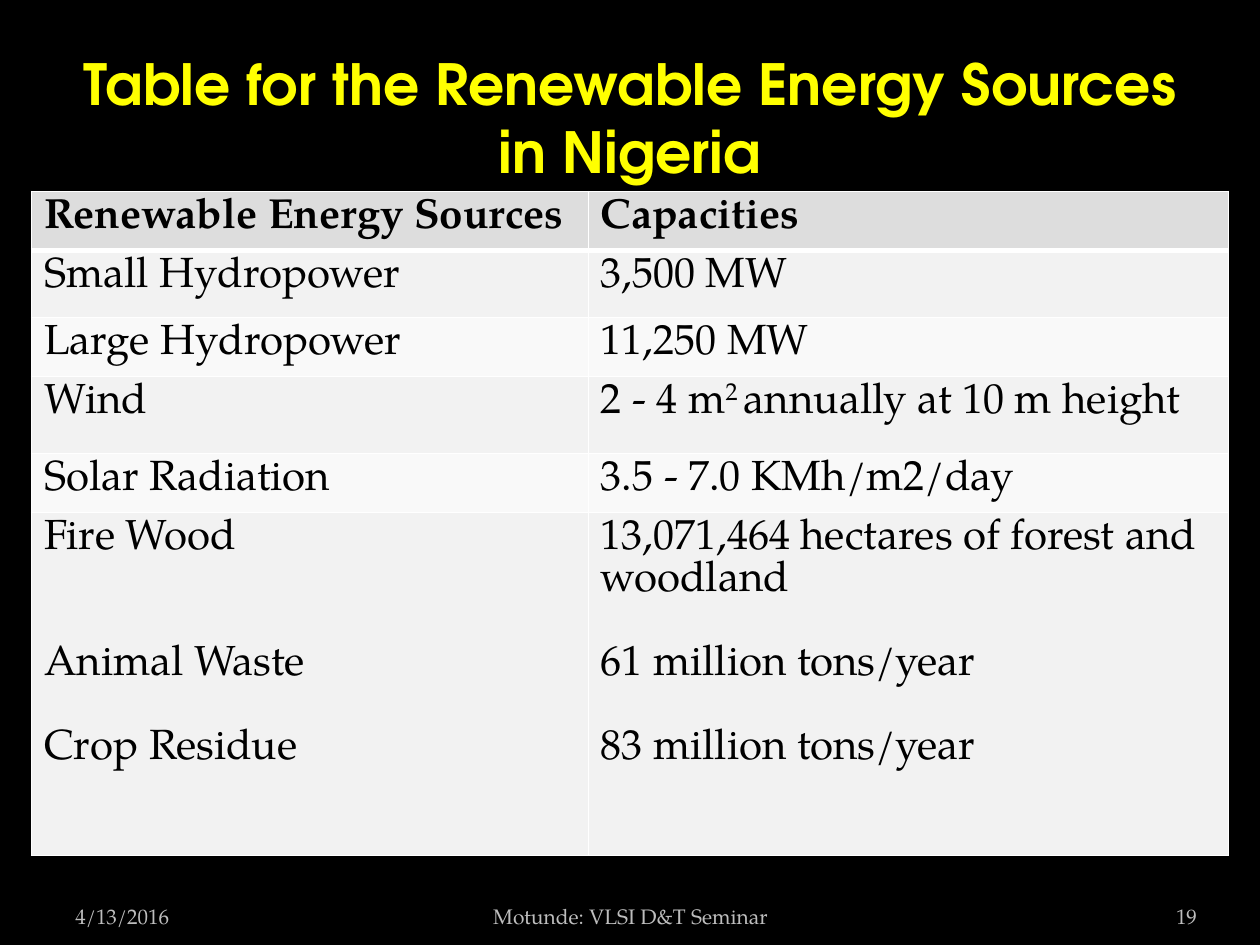
from dataclasses import dataclass

from lxml import etree
from pptx import Presentation
from pptx.dml.color import RGBColor
from pptx.enum.text import MSO_ANCHOR, PP_ALIGN
from pptx.oxml.ns import qn
from pptx.util import Inches, Pt

LEFT, CENTER, RIGHT = PP_ALIGN.LEFT, PP_ALIGN.CENTER, PP_ALIGN.RIGHT
TOP, MIDDLE, BOTTOM = MSO_ANCHOR.TOP, MSO_ANCHOR.MIDDLE, MSO_ANCHOR.BOTTOM
TITLE_ONLY = 5


@dataclass(frozen=True)
class Theme:
    back: str = "000000"
    title: str = "FFFF00"
    ink: str = "000000"
    foot: str = "BDBDBD"
    rule: str = "FFFFFF"
    head: str = "DDDDDD"
    bands: tuple = ("F2F2F2", "F9F9F9")
    title_font: str = "TeX Gyre Adventor"
    body_font: str = "TeX Gyre Pagella"
    title_size: float = 32.4
    body_size: float = 24
    foot_size: float = 12


class Deck:
    def __init__(self, theme):
        self.theme = theme
        self.prs = Presentation()
        self.prs.slide_width, self.prs.slide_height = Inches(10), Inches(7.5)
        self.slide = None

    def add_slide(self):
        self.slide = self.prs.slides.add_slide(self.prs.slide_layouts[TITLE_ONLY])
        fill = self.slide.background.fill
        fill.solid()
        fill.fore_color.rgb = RGBColor.from_string(self.theme.back)

    def style(self, para, font, size, color, bold=False):
        for run in para.runs:
            run.font.name, run.font.size, run.font.bold = font, Pt(size), bold
            run.font.color.rgb = RGBColor.from_string(color)

    def title(self, text, box):
        t = self.theme
        shape = self.slide.shapes.title
        shape.left, shape.top, shape.width, shape.height = map(Inches, box)
        frame = shape.text_frame
        frame.text = text
        frame.word_wrap, frame.vertical_anchor = True, MIDDLE
        para = frame.paragraphs[0]
        para.alignment = CENTER
        self.style(para, t.title_font, t.title_size, t.title, True)

    def footer(self, text, box, align, inset=0.1):
        t = self.theme
        frame = self.slide.shapes.add_textbox(*map(Inches, box)).text_frame
        frame.text = text
        frame.word_wrap, frame.vertical_anchor = True, BOTTOM
        frame.margin_left = frame.margin_right = Inches(inset)
        para = frame.paragraphs[0]
        para.alignment = align
        self.style(para, t.body_font, t.foot_size, t.foot)

    def border(self, cell, side, width):
        props = cell._tc.get_or_add_tcPr()
        line = etree.SubElement(props, qn(f"a:ln{side}"), w=str(Pt(width)))
        fill = etree.SubElement(line, qn("a:solidFill"))
        etree.SubElement(fill, qn("a:srgbClr"), val=self.theme.rule)

    def cell(self, cell, lines, row):
        """Fill a cell; each line is (text runs, blank lines before it)."""
        t = self.theme
        head = row == 0
        for side in "LRTB":
            thick = (head and side == "B") or (row == 1 and side == "T")
            self.border(cell, side, 3 if thick else 1)
        cell.fill.solid()
        color = t.head if head else t.bands[(row - 1) % 2]
        cell.fill.fore_color.rgb = RGBColor.from_string(color)
        cell.vertical_anchor = TOP
        frame = cell.text_frame
        for i, (parts, gap) in enumerate(lines):
            para = frame.add_paragraph() if i else frame.paragraphs[0]
            for j, part in enumerate(parts):
                run = para.add_run()
                run.text = part
                if j % 2:  # every second run is raised
                    run._r.get_or_add_rPr().set("baseline", "30000")
            para.alignment = LEFT
            para.line_spacing = Pt(t.body_size)
            para.space_before = Pt(gap * t.body_size)
            self.style(para, t.body_font, t.body_size, t.ink, head)

    def table(self, rows, left, top, widths, heights):
        box = map(Inches, (left, top, sum(widths), sum(heights)))
        grid = self.slide.shapes.add_table(len(rows), len(widths), *box).table
        for col, width in zip(grid.columns, widths):
            col.width = Inches(width)
        for r, (row, height) in enumerate(zip(rows, heights)):
            grid.rows[r].height = Inches(height)
            for c, lines in enumerate(row):
                self.cell(grid.cell(r, c), lines, r)


def one(*parts):
    return [(parts, 0)]


ROWS = [
    (one("Renewable Energy Sources"), one("Capacities")),
    (one("Small Hydropower"), one("3,500 MW")),
    (one("Large Hydropower"), one("11,250 MW")),
    (one("Wind"), one("2 - 4 m", "2 ", "annually at 10 m height")),
    (one("Solar Radiation"), one("3.5 - 7.0 KMh/m2/day")),
    (
        [(("Fire Wood",), 0), (("Animal Waste",), 2), (("Crop Residue",), 1)],
        [
            (("13,071,464 hectares of forest and woodland",), 0),
            (("61 million tons/year",), 1),
            (("83 million tons/year",), 1),
        ],
    ),
]


def main():
    deck = Deck(Theme())
    deck.add_slide()

    # Title
    deck.title("Table for the Renewable Energy Sources in Nigeria", (0.5, 0.3, 9, 1.25))

    # Sources and capacities
    deck.table(ROWS, 0.25, 1.52, (4.42, 5.08), (0.47, 0.53, 0.47, 0.61, 0.47, 2.72))

    # Footer: date, seminar, page
    deck.footer("4/13/2016", (0.5, 7.02, 2.33, 0.4), LEFT)
    deck.footer("Motunde: VLSI D&T Seminar", (3.42, 7.02, 3.17, 0.4), CENTER)
    deck.footer("19", (8.67, 7.02, 0.83, 0.4), RIGHT, 0)

    deck.prs.save("out.pptx")


if __name__ == "__main__":
    main()
